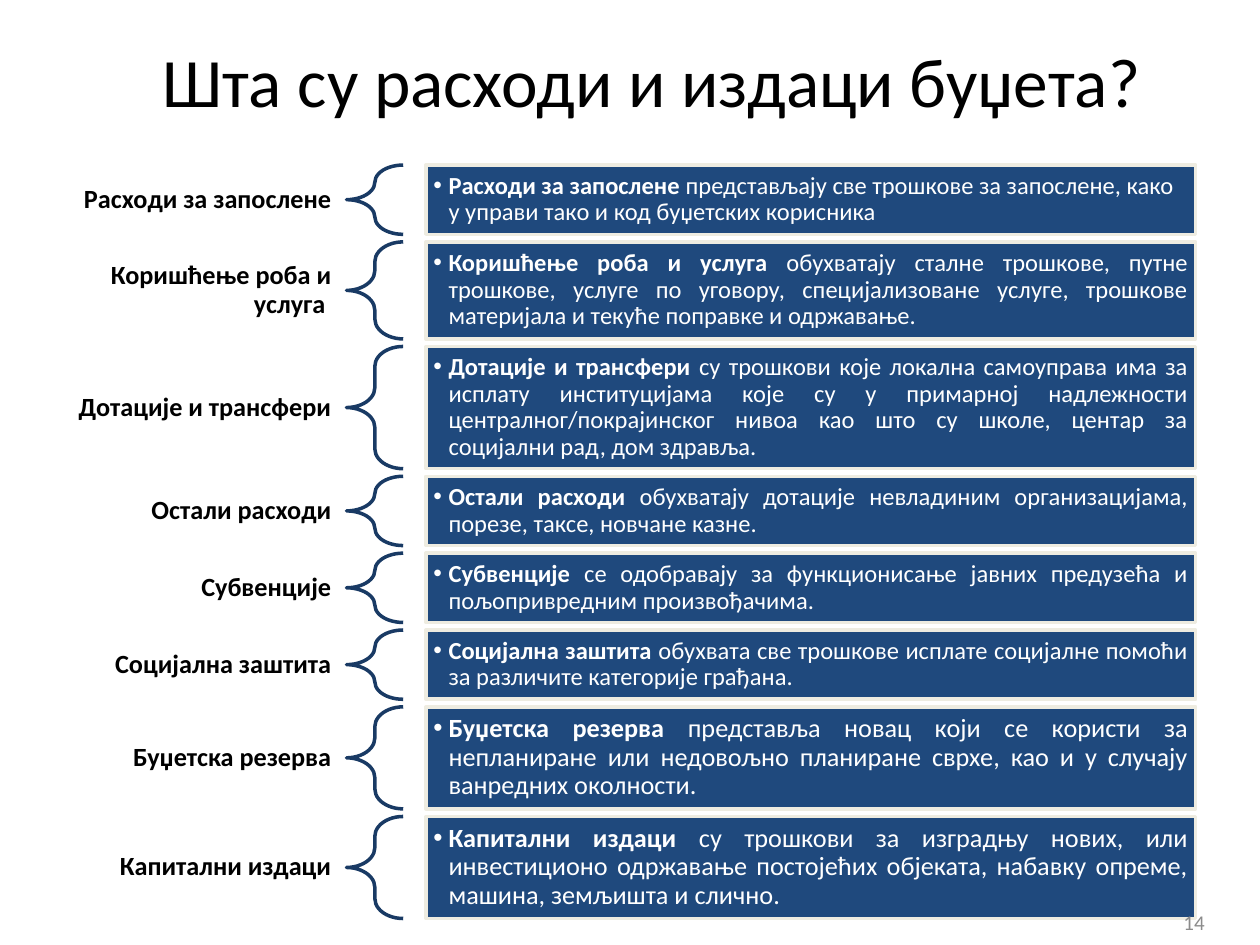
from dataclasses import dataclass
from typing import Any

from lxml.etree import SubElement
from pptx import Presentation
from pptx.dml.color import RGBColor
from pptx.enum.shapes import MSO_SHAPE as Shape
from pptx.enum.text import MSO_ANCHOR as Anchor, MSO_AUTO_SIZE as Fit, PP_ALIGN as Align
from pptx.oxml.ns import qn
from pptx.util import Inches, Pt

HUES = {
    "ink": "000000",
    "box": "1F497D",
    "edge": "EEECE1",
    "brace": "193A64",
    "white": "FFFFFF",
    "grey": "8C8C8C",
}
FONT = "Calibri"
TOP, GAP = 1.31, 0.06


@dataclass
class Row:
    label: str
    lead: str
    rest: str
    high: float = 0.55
    size: int = 14
    align: Any = Align.JUSTIFY


ROWS = [
    Row("Расходи за запослене", "Расходи за запослене ",
        "представљају све трошкове за запослене, како у управи тако и код "
        "буџетских корисника", align=Align.LEFT),
    Row("Коришћење роба и услуга ", "Коришћење роба и услуга ",
        "обухватају сталне трошкове, путне трошкове, услуге по уговору, "
        "специјализоване услуге, трошкове материјала и текуће поправке и "
        "одржавање.", high=0.77),
    Row("Дотације и трансфери", "Дотације и трансфери ",
        "су трошкови које локална самоуправа има за исплату институцијама које "
        "су у примарној надлежности централног/покрајинског нивоа као што су "
        "школе, центар за социјални рад, дом здравља.", high=0.97),
    Row("Остали расходи", "Остали расходи ",
        "обухватају дотације невладиним организацијама, порезе, таксе, "
        "новчане казне."),
    Row("Субвенције", "Субвенције ",
        "сe одобравају за функционисање јавних предузећа и "
        "пољопривредним произвођачима."),
    Row("Социјална заштита", "Социјална заштита ",
        "обухвата све трошкове исплате социјалне помоћи за различите "
        "категорије грађана."),
    Row("Буџетска резерва", "Буџетска резерва ",
        "представља новац који се користи за непланиране или недовољно "
        "планиране сврхе, као и у случају ванредних околности.",
        high=0.81, size=15),
    Row("Капитални издаци", "Капитални издаци ",
        "су трошкови за изградњу нових, или инвестиционо одржавање постојећих "
        "објеката, набавку опреме, машина, земљишта и слично.",
        high=0.81, size=15),
]


def hue(name: str) -> RGBColor:
    return RGBColor.from_string(HUES[name])


def write(shape: Any, text: str, *, lead: str = "", size: float = 15,
          color: str = "ink", bold: bool = False, align: Any = Align.LEFT,
          pad: tuple = (0.1, 0.05), space: float = 1.0) -> Any:
    """Fill a shape with one paragraph, with an optional bold lead."""
    frame = shape.text_frame
    frame.word_wrap = True
    frame.auto_size = Fit.NONE
    frame.vertical_anchor = Anchor.MIDDLE
    frame.margin_left = frame.margin_right = Inches(pad[0])
    frame.margin_top = frame.margin_bottom = Inches(pad[1])
    para = frame.paragraphs[0]
    para.alignment = align
    para.line_spacing = space
    for part, heavy in ((lead, True), (text, bold)):
        if part:
            run = para.add_run()
            run.text = part
            run.font.name = FONT
            run.font.size = Pt(size)
            run.font.bold = heavy
            run.font.color.rgb = hue(color)
    return para


def bullet(para: Any) -> None:
    props = para._p.get_or_add_pPr()
    props.set("marL", str(Inches(0.12)))
    props.set("indent", str(-Inches(0.12)))
    SubElement(props, qn("a:buFont")).set("typeface", "Arial")
    SubElement(props, qn("a:buChar")).set("char", "•")


def add_shape(slide: Any, kind: Any, left: float, top: float, wide: float,
              high: float, line: str) -> Any:
    shape = slide.shapes.add_shape(
        kind, Inches(left), Inches(top), Inches(wide), Inches(high))
    shape.shadow.inherit = False
    shape.line.color.rgb = hue(line)
    shape.line.width = Pt(2)
    return shape


def add_text(slide: Any, left: float, top: float, wide: float, high: float,
             text: str, **look: Any) -> None:
    box = slide.shapes.add_textbox(
        Inches(left), Inches(top), Inches(wide), Inches(high))
    write(box, text, **look)


def add_row(slide: Any, row: Row, top: float) -> None:
    # Label, brace and explanation share one vertical span
    add_text(slide, 0.5, top, 2.25, row.high, row.label, bold=True,
             align=Align.RIGHT, pad=(0.12, 0.04), space=0.9)
    brace = add_shape(slide, Shape.LEFT_BRACE, 2.75, top, 0.45, row.high, "brace")
    brace.fill.background()
    brace.adjustments[0] = 0.35
    brace.adjustments[1] = 0.5
    box = add_shape(slide, Shape.RECTANGLE, 3.38, top, 6.11, row.high, "edge")
    box.fill.solid()
    box.fill.fore_color.rgb = hue("box")
    bullet(write(box, row.rest, lead=row.lead, size=row.size, color="white",
                 align=row.align, pad=(0.06, 0.06), space=0.9))


def main() -> None:
    deck = Presentation()
    deck.slide_width, deck.slide_height = Inches(10), Inches(7.5)
    slide = deck.slides.add_slide(deck.slide_layouts[5])

    # Title
    title = slide.shapes.title
    title.left, title.top = Inches(0.67), Inches(0.29)
    title.width, title.height = Inches(9), Inches(0.68)
    write(title, "Шта су расходи и издаци буџета?", size=39.6, align=Align.CENTER)

    # Rows stacked with an equal gap
    top = TOP
    for row in ROWS:
        add_row(slide, row, top)
        top += row.high + GAP

    # Page number
    add_text(slide, 7.33, 7.12, 2.33, 0.4, "14", size=12, color="grey",
             align=Align.RIGHT)
    deck.save("out.pptx")


if __name__ == "__main__":
    main()
